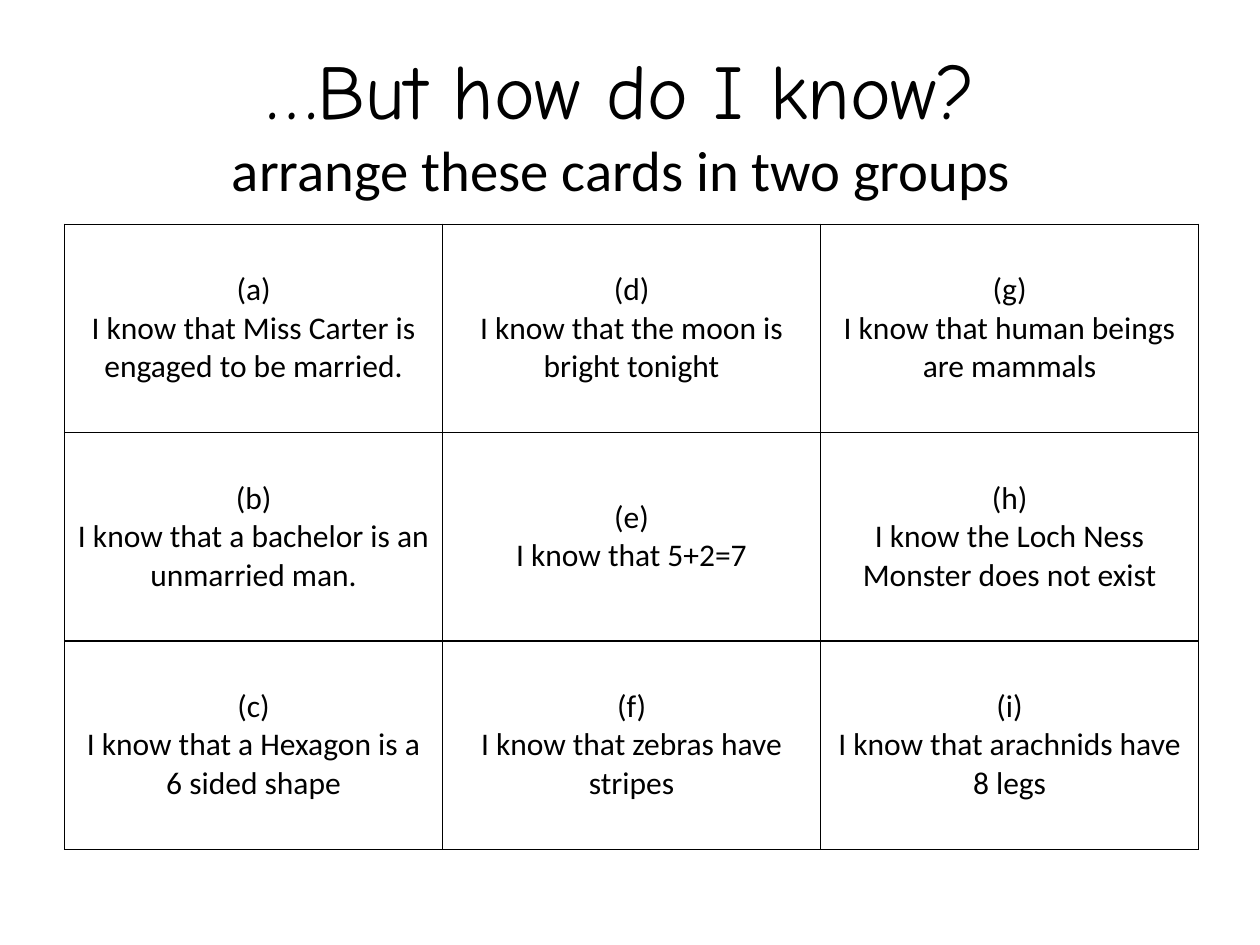
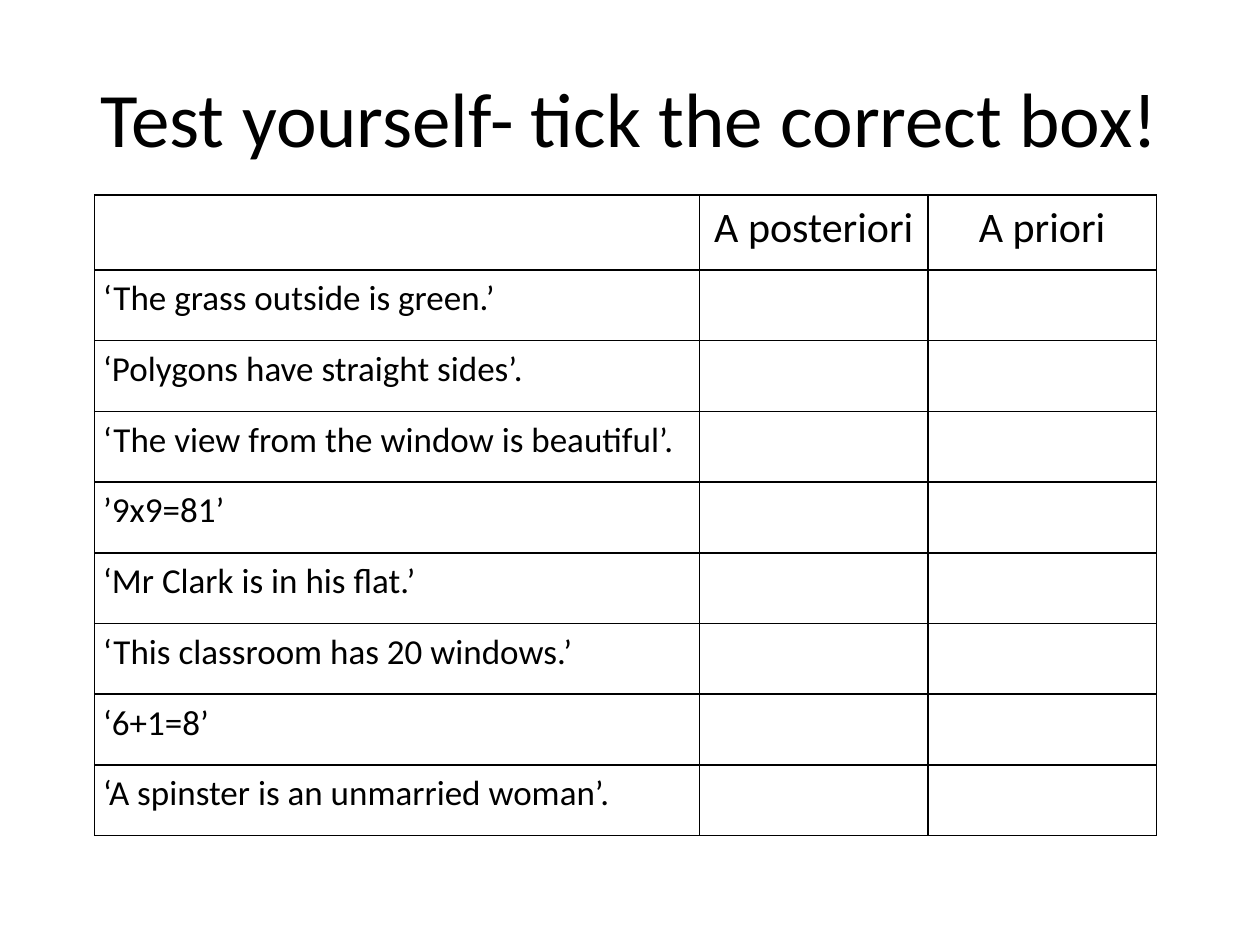
from lxml.etree import SubElement
from pptx import Presentation
from pptx.dml.color import RGBColor
from pptx.enum.text import MSO_ANCHOR, PP_ALIGN
from pptx.oxml.ns import qn
from pptx.util import Pt

INK = "000000"


def add_run(p, text, size, font="Calibri"):
    r = p.add_run()
    r.text = text
    for name, value in {"size": Pt(size), "name": font, "bold": False}.items():
        setattr(r.font, name, value)
    r.font.color.rgb = RGBColor.from_string(INK)


def add_grid(s, left, top, widths, heights):
    sp = s.shapes.add_table(len(heights), len(widths), Pt(left), Pt(top),
                            Pt(sum(widths)), Pt(sum(heights)))
    table = sp.table
    for flag in ("first_row", "horz_banding"):
        setattr(table, flag, False)
    for column, width in zip(table.columns, widths):
        column.width = Pt(width)
    for row, height in zip(table.rows, heights):
        row.height = Pt(height)
    for cell in table.iter_cells():
        tc_pr = cell._tc.get_or_add_tcPr()
        for side in ("a:lnL", "a:lnR", "a:lnT", "a:lnB"):
            ln = SubElement(tc_pr, qn(side), w=str(Pt(1)))
            fill = SubElement(ln, qn("a:solidFill"))
            SubElement(fill, qn("a:srgbClr"), val=INK)
        cell.fill.background()
    return table


prs = Presentation()
prs.slide_width, prs.slide_height = Pt(720), Pt(540)

titles = [
    (31, 26, 88.5, [("…But how do I know?", 44.1, "Comic Neue"),
                    ("arrange these cards in two groups", 32.4, "Calibri")]),
    (36, 21.6, 90, [("Test yourself- tick the correct box!", 44, "Calibri")]),
]
for left, top, height, lines in titles:
    s = prs.slides.add_slide(prs.slide_layouts[6])
    tf = s.shapes.add_textbox(Pt(left), Pt(top), Pt(648), Pt(height)).text_frame
    tf.word_wrap = True
    tf.vertical_anchor = MSO_ANCHOR.MIDDLE
    p = tf.paragraphs[0]
    p.alignment = PP_ALIGN.CENTER
    for i, (text, size, font) in enumerate(lines):
        if i:
            p.add_line_break()
        add_run(p, text, size, font)

cards_slide, test_slide = prs.slides

cards = [
    "I know that Miss Carter is engaged to be married.",
    "I know that a bachelor is an unmarried man.",
    "I know that a Hexagon is a 6 sided shape",
    "I know that the moon is bright tonight",
    "I know that 5+2=7",
    "I know that zebras have stripes",
    "I know that human beings are mammals",
    "I know the Loch Ness Monster does not exist",
    "I know that arachnids have 8 legs",
]
table = add_grid(cards_slide, 36.9, 128.2, [216] * 3, [119.05] * 3)
for i, card in enumerate(cards):
    cell = table.cell(i % 3, i // 3)
    cell.vertical_anchor = MSO_ANCHOR.MIDDLE
    tf = cell.text_frame
    for p, text in ((tf.paragraphs[0], f"({'abcdefghi'[i]})"), (tf.add_paragraph(), card)):
        p.alignment = PP_ALIGN.CENTER
        add_run(p, text, 18)

statements = [
    "‘The grass outside is green.’",
    "‘Polygons have straight sides’.",
    "‘The view from the window is beautiful’.",
    "’9x9=81’",
    "‘Mr Clark is in his flat.’",
    "‘This classroom has 20 windows.’",
    "‘6+1=8’",
    "‘A spinster is an unmarried woman’.",
]
header = {"margin_left": 0, "margin_right": 0, "margin_top": 0, "margin_bottom": 0}
body = {"margin_left": Pt(5), "margin_right": Pt(5), "margin_top": Pt(0.7), "margin_bottom": 0}
entries = [(0, 1, "A posteriori", 24, PP_ALIGN.CENTER, header),
           (0, 2, "A priori", 24, PP_ALIGN.CENTER, header)]
entries += [(row, 0, text, 20, PP_ALIGN.LEFT, body) for row, text in enumerate(statements, 1)]

table = add_grid(test_slide, 54, 111.4, [345.8, 130.5, 130.5], [42.8] + [40.45] * 8)
for row, col, text, size, align, margins in entries:
    cell = table.cell(row, col)
    for name, value in margins.items():
        setattr(cell, name, value)
    p = cell.text_frame.paragraphs[0]
    for name, value in {"alignment": align, "line_spacing": 1.15}.items():
        setattr(p, name, value)
    add_run(p, text, size)

prs.save("out.pptx")
